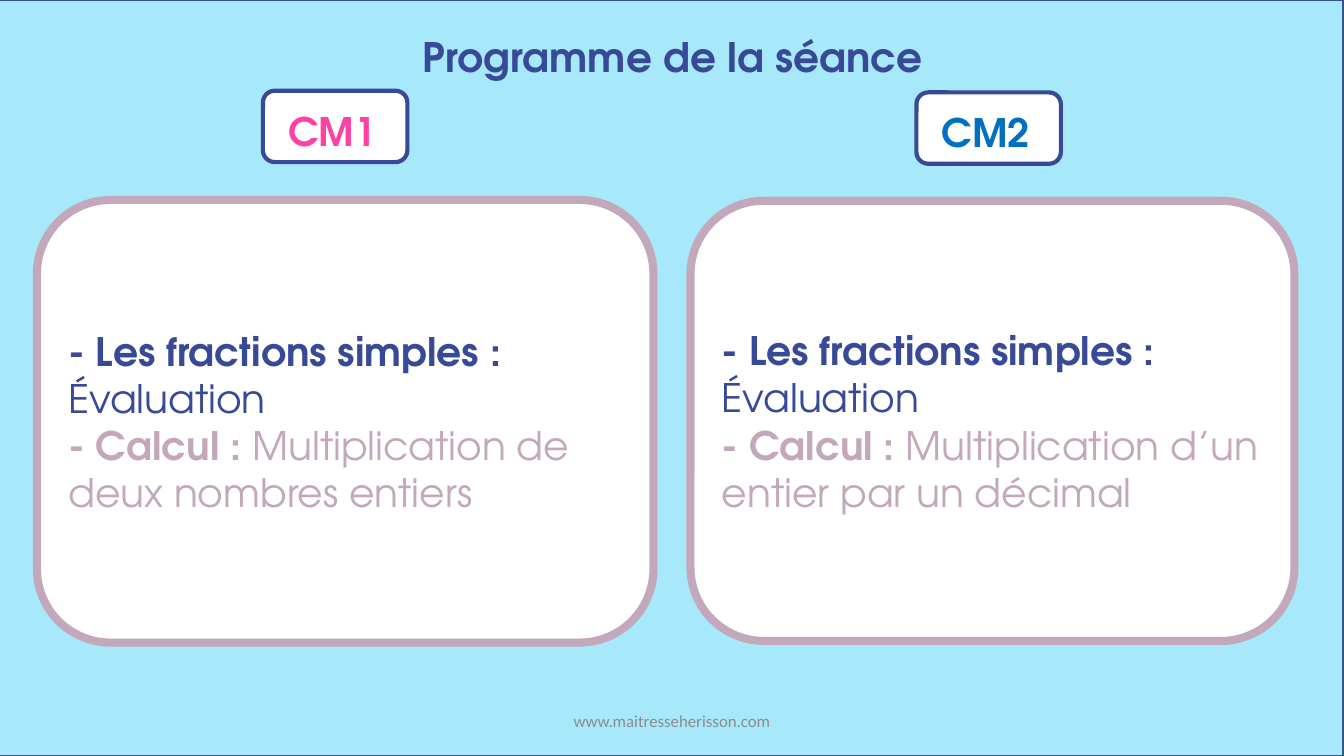
from dataclasses import dataclass

from pptx import Presentation
from pptx.dml.color import RGBColor
from pptx.enum.shapes import MSO_SHAPE
from pptx.enum.text import MSO_ANCHOR, PP_ALIGN
from pptx.util import Inches, Pt

COLORS = {
    "sky": "A7E8FB",
    "frame": "325491",
    "navy": "374997",
    "white": "FFFFFF",
    "mauve": "C3A7BA",
    "pink": "FF41A5",
    "blue": "0070C0",
    "gray": "8C8C8C",
}
HEADING_FONT = "TeX Gyre Adventor"
FOOTER_FONT = "Calibri"
SLIDE_WIDTH, SLIDE_HEIGHT = Inches(13.33), Inches(7.5)
COLUMN, ROW = SLIDE_WIDTH / 160, SLIDE_HEIGHT / 90


@dataclass(frozen=True)
class Area:
    column: float
    row: float
    columns: float
    rows: float

    def lengths(self) -> tuple[int, int, int, int]:
        return (
            round(self.column * COLUMN),
            round(self.row * ROW),
            round(self.columns * COLUMN),
            round(self.rows * ROW),
        )


@dataclass(frozen=True)
class Level:
    name: str
    color: str
    badge: Area
    panel: Area
    calculation: str


LEVELS = [
    Level("CM1", "pink", Area(31.3, 10.8, 17.2, 8.5),
          Area(4.4, 23.8, 73.4, 52.7), "Multiplication de deux nombres entiers"),
    Level("CM2", "blue", Area(109.1, 11, 17.2, 8.5),
          Area(82.2, 23.9, 71.9, 52.4), "Multiplication d’un entier par un décimal"),
]


def rgb(name: str) -> RGBColor:
    return RGBColor.from_string(COLORS[name])


def add_box(shapes, area: Area, kind=MSO_SHAPE.ROUNDED_RECTANGLE, *,
            fill: str = "white", line: str, weight: float):
    shape = shapes.add_shape(kind, *area.lengths())
    shape.shadow.inherit = False
    shape.fill.solid()
    shape.fill.fore_color.rgb = rgb(fill)
    shape.line.color.rgb = rgb(line)
    shape.line.width = Pt(weight)
    return shape


def add_run(paragraph, text: str, *, color: str, size: float = 28,
            font: str = HEADING_FONT, bold: bool = False) -> None:
    run = paragraph.add_run()
    run.text = text
    run.font.name = font
    run.font.size = Pt(size)
    run.font.bold = bold
    run.font.color.rgb = rgb(color)


def add_label(shapes, area: Area, text: str, *, align=PP_ALIGN.CENTER,
              anchor=MSO_ANCHOR.TOP, **text_format) -> None:
    frame = shapes.add_textbox(*area.lengths()).text_frame
    frame.word_wrap = True
    frame.vertical_anchor = anchor
    frame.paragraphs[0].alignment = align
    add_run(frame.paragraphs[0], text, **text_format)


def add_badge(slide, level: Level) -> None:
    group = slide.shapes.add_group_shape()
    add_box(group.shapes, level.badge, line="navy", weight=3)
    label = Area(level.badge.column + 1.85, level.badge.row + 1.35, 13.2, 6.8)
    add_label(group.shapes, label, level.name, align=PP_ALIGN.LEFT,
              color=level.color, bold=True)


def add_panel(slide, level: Level) -> None:
    frame = add_box(slide.shapes, level.panel, line="mauve", weight=5.75).text_frame
    frame.word_wrap = True
    frame.vertical_anchor = MSO_ANCHOR.MIDDLE
    topics = [
        ("- Les fractions simples : ", "Évaluation", "navy"),
        ("- Calcul : ", level.calculation, "mauve"),
    ]
    for index, (topic, activity, color) in enumerate(topics):
        paragraph = frame.add_paragraph() if index else frame.paragraphs[0]
        paragraph.alignment = PP_ALIGN.LEFT
        add_run(paragraph, topic, color=color, bold=True)
        add_run(paragraph, activity, color=color)


def main() -> None:
    presentation = Presentation()
    presentation.slide_width = SLIDE_WIDTH
    presentation.slide_height = SLIDE_HEIGHT
    slide = presentation.slides.add_slide(presentation.slide_layouts[6])

    add_box(slide.shapes, Area(-0.1, 0, 160, 90), MSO_SHAPE.RECTANGLE,
            fill="sky", line="frame", weight=1)
    add_label(slide.shapes, Area(0.1, 3.25, 160, 7.1), "Programme de la séance",
              color="navy", size=29, bold=True)
    for level in LEVELS:
        add_badge(slide, level)
        add_panel(slide, level)
    add_label(slide.shapes, Area(53, 83.4, 54, 4.8), "www.maitresseherisson.com",
              anchor=MSO_ANCHOR.MIDDLE, color="gray", size=12, font=FOOTER_FONT)

    presentation.save("out.pptx")


if __name__ == "__main__":
    main()
